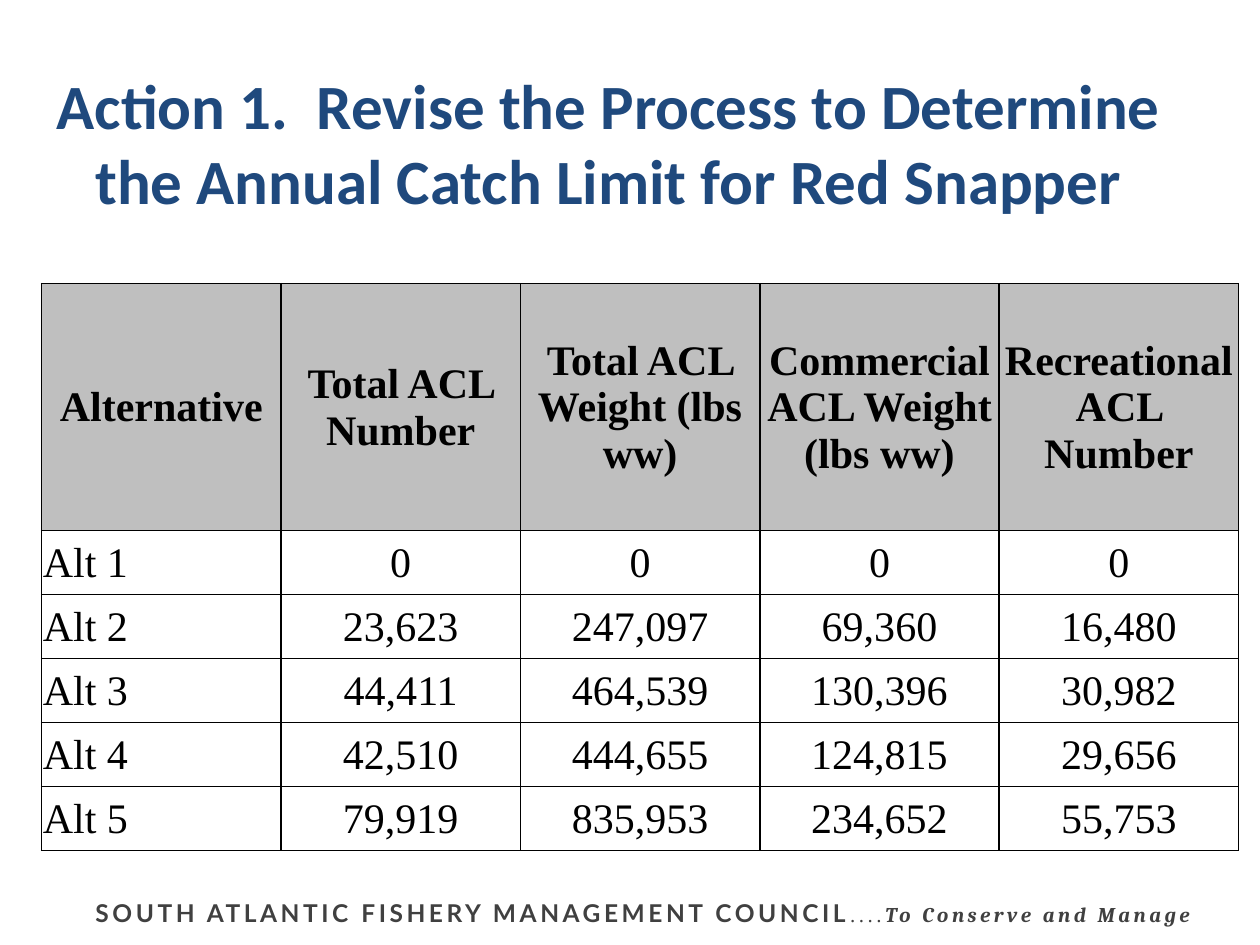
import pptx
import pptx.util
import pptx.dml.color
import pptx.enum.text
import lxml.etree

Pt = pptx.util.Pt
ALIGN = pptx.enum.text.PP_ALIGN
MIDDLE = pptx.enum.text.MSO_ANCHOR.MIDDLE

COLORS = {"title": "1F497D", "footer": "404040", "header": "BFBFBF",
          "body": "FFFFFF", "ink": "000000"}

TITLE = "Action 1.  Revise the Process to Determine the Annual Catch Limit for Red Snapper"
ROWS = [
    ("Alternative", "Total ACL Number", "Total ACL Weight (lbs ww)",
     "Commercial ACL Weight (lbs ww)", "Recreational ACL Number"),
    ("Alt 1", "0", "0", "0", "0"),
    ("Alt 2", "23,623", "247,097", "69,360", "16,480"),
    ("Alt 3", "44,411", "464,539", "130,396", "30,982"),
    ("Alt 4", "42,510", "444,655", "124,815", "29,656"),
    ("Alt 5", "79,919", "835,953", "234,652", "55,753"),
]
# text, font, size, bold, italic
FOOTER = [
    ("SOUTH ATLANTIC FISHERY MANAGEMENT COUNCIL", "Lato", 14, True, False),
    ("....", "Times New Roman", 12, False, False),
    ("To Conserve and Manage", "Cambria", 12, True, True),
]
COL_WIDTH, HEADER_HEIGHT, ROW_HEIGHT = 136.8, 141.12, 36.58


def rgb(name):
    return pptx.dml.color.RGBColor.from_string(COLORS[name])


def set_font(font, name, size, color, bold=False, italic=False):
    font.name, font.size, font.bold, font.italic = name, Pt(size), bold, italic
    font.color.rgb = rgb(color)


def add_borders(cell):
    """Draw a 1 pt line on each side; lines must precede the fill in tcPr."""
    ns = pptx.oxml.ns.qn
    tcPr = cell._tc.get_or_add_tcPr()
    for i, side in enumerate(("lnL", "lnR", "lnT", "lnB")):
        ln = lxml.etree.Element(ns("a:" + side), w=str(Pt(1)))
        fill = lxml.etree.SubElement(ln, ns("a:solidFill"))
        lxml.etree.SubElement(fill, ns("a:srgbClr"), val=COLORS["ink"])
        tcPr.insert(i, ln)


def add_title(s):
    sp = s.shapes.title
    sp.left, sp.top, sp.width, sp.height = Pt(23.76), Pt(36), Pt(648), Pt(90)
    tf = sp.text_frame
    tf.text = TITLE
    tf.word_wrap = True
    tf.vertical_anchor = MIDDLE
    p = tf.paragraphs[0]
    p.alignment = ALIGN.CENTER
    set_font(p.font, "Calibri", 36, "title", bold=True)


def add_acl_table(s):
    cols = len(ROWS[0])
    height = HEADER_HEIGHT + ROW_HEIGHT * (len(ROWS) - 1)
    table = s.shapes.add_table(len(ROWS), cols, Pt(23.76), Pt(162),
                               Pt(COL_WIDTH * cols), Pt(height)).table
    for col in table.columns:
        col.width = Pt(COL_WIDTH)
    for i, row in enumerate(ROWS):
        table.rows[i].height = Pt(ROW_HEIGHT if i else HEADER_HEIGHT)
        for j, text in enumerate(row):
            cell = table.cell(i, j)
            cell.text = text
            cell.vertical_anchor = MIDDLE
            cell.margin_left = cell.margin_right = cell.margin_top = Pt(0.72)
            cell.margin_bottom = 0
            cell.fill.solid()
            cell.fill.fore_color.rgb = rgb("body" if i else "header")
            add_borders(cell)
            p = cell.text_frame.paragraphs[0]
            p.alignment = ALIGN.LEFT if i and j == 0 else ALIGN.CENTER
            set_font(p.font, "Times New Roman", 24, "ink", bold=i == 0)


def add_footer(s):
    sp = s.shapes.add_textbox(Pt(47.52), Pt(509.76), Pt(672.48), Pt(24.48))
    tf = sp.text_frame
    tf.word_wrap = True
    p = tf.paragraphs[0]
    for text, name, size, bold, italic in FOOTER:
        r = p.add_run()
        r.text = text
        set_font(r.font, name, size, "footer", bold, italic)
        r._r.get_or_add_rPr().set("spc", "200")


def main():
    prs = pptx.Presentation()
    prs.slide_width, prs.slide_height = Pt(720), Pt(540)
    s = prs.slides.add_slide(prs.slide_layouts[5])
    add_footer(s)
    add_title(s)
    add_acl_table(s)
    prs.save("out.pptx")


if __name__ == "__main__":
    main()
